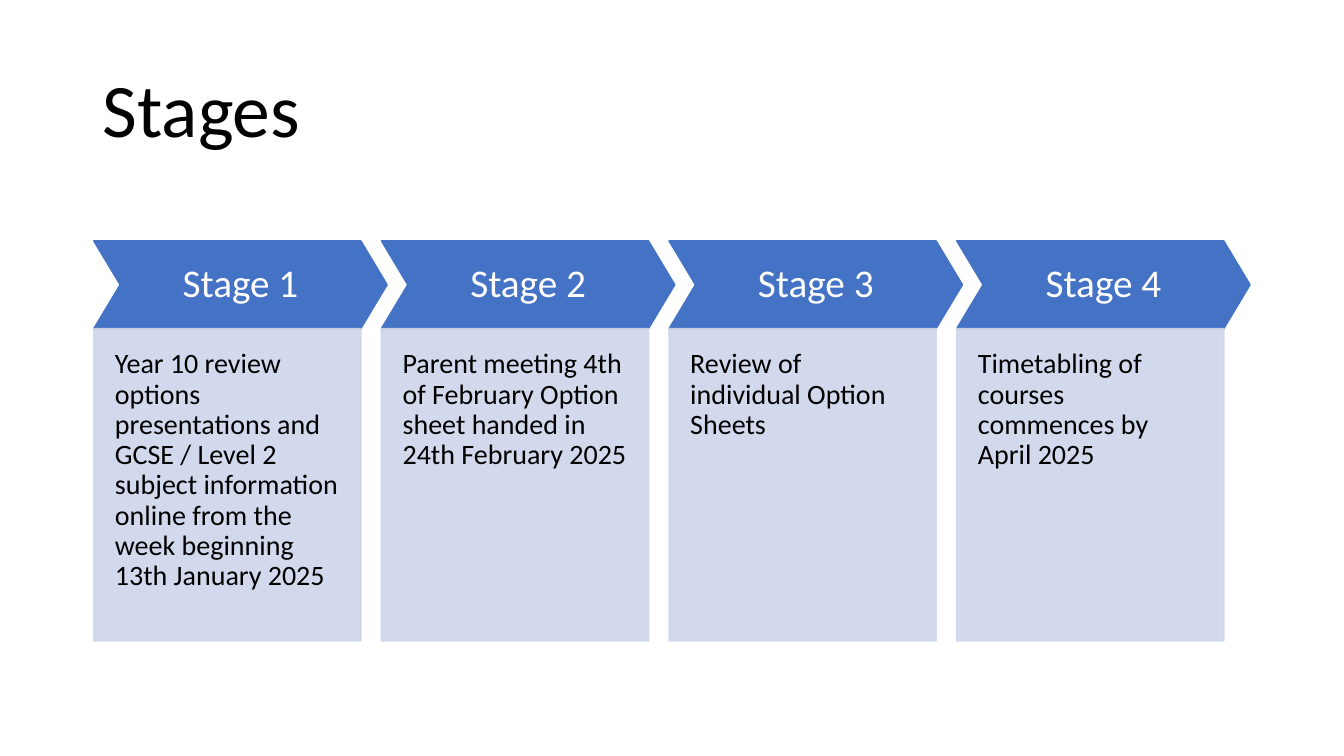
import pptx
import pptx.dml.color
import pptx.enum.shapes
import pptx.enum.text
import pptx.oxml
import pptx.oxml.ns
import pptx.util
from pptx.dml.color import RGBColor
from pptx.enum.shapes import MSO_SHAPE
from pptx.enum.text import MSO_ANCHOR, PP_ALIGN
from pptx.util import Inches

BLACK = RGBColor(0x00, 0x00, 0x00)
WHITE = RGBColor(0xFF, 0xFF, 0xFF)
BLUE = RGBColor(0x44, 0x72, 0xC4)
PALE_BLUE = RGBColor(0xCF, 0xD5, 0xEA)

STAGE_LEFT = 0.93
STAGE_STEP = 2.853
HEADER_TOP = 2.39
HEADER_WIDTH = 2.91
HEADER_HEIGHT = 0.87
DETAIL_WIDTH = 2.65
DETAIL_HEIGHT = 3.1

STAGES = [
    ("Stage 1", "Year 10 review options presentations and GCSE / Level 2 "
     "subject information online from the week beginning 13th January 2025"),
    ("Stage 2", "Parent meeting 4th of February Option sheet handed in "
     "24th February 2025"),
    ("Stage 3", "Review of individual Option Sheets"),
    ("Stage 4", "Timetabling of courses commences by April 2025"),
]


def write_text(box, text, size, color, align, anchor, insets):
    frame = box.text_frame
    frame.word_wrap = True
    frame.vertical_anchor = anchor
    (frame.margin_left, frame.margin_top,
     frame.margin_right, frame.margin_bottom) = map(Inches, insets)
    para = frame.paragraphs[0]
    para.text = text
    para.alignment = align
    para.line_spacing = 0.9
    para.font.name = "Calibri"
    para.font.size = pptx.util.Pt(size)
    para.font.color.rgb = color


def set_opacity(shape, percent):
    for color in shape.fill._xPr.iter(pptx.oxml.ns.qn("a:srgbClr")):
        alpha = color.makeelement(pptx.oxml.ns.qn("a:alpha"),
                                  {"val": str(percent * 1000)})
        color.append(alpha)


def add_panel(page, kind, left, top, width, height, color):
    panel = page.shapes.add_shape(kind, Inches(left), Inches(top),
                                  Inches(width), Inches(height))
    panel.shadow.inherit = False
    panel.fill.solid()
    panel.fill.fore_color.rgb = color
    panel.line.color.rgb = color
    panel.line.width = pptx.util.Pt(1)
    return panel


def add_title(page, text):
    box = page.shapes.add_textbox(Inches(0.92), Inches(0.4),
                                  Inches(11.5), Inches(1.45))
    write_text(box, text, 54, BLACK, PP_ALIGN.LEFT, MSO_ANCHOR.MIDDLE,
               (0.1, 0.05, 0.1, 0.05))


def add_stage(page, left, name, detail):
    header = add_panel(page, MSO_SHAPE.CHEVRON, left, HEADER_TOP,
                       HEADER_WIDTH, HEADER_HEIGHT, BLUE)
    header.adjustments[0] = 0.3
    write_text(header, name, 28, WHITE, PP_ALIGN.CENTER, MSO_ANCHOR.MIDDLE,
               (0.11, 0.11, 0.11, 0.11))
    body = add_panel(page, MSO_SHAPE.RECTANGLE, left,
                     HEADER_TOP + HEADER_HEIGHT,
                     DETAIL_WIDTH, DETAIL_HEIGHT, PALE_BLUE)
    set_opacity(body, 90)
    write_text(body, detail, 20, BLACK, PP_ALIGN.LEFT, MSO_ANCHOR.TOP,
               (0.21, 0.21, 0.21, 0.42))


def main():
    deck = pptx.Presentation()
    deck.slide_width = Inches(13.33)
    deck.slide_height = Inches(7.5)
    page = deck.slides.add_slide(deck.slide_layouts[6])
    add_title(page, "Stages")
    for index, (name, detail) in enumerate(STAGES):
        add_stage(page, STAGE_LEFT + index * STAGE_STEP, name, detail)
    deck.save("out.pptx")


if __name__ == "__main__":
    main()
